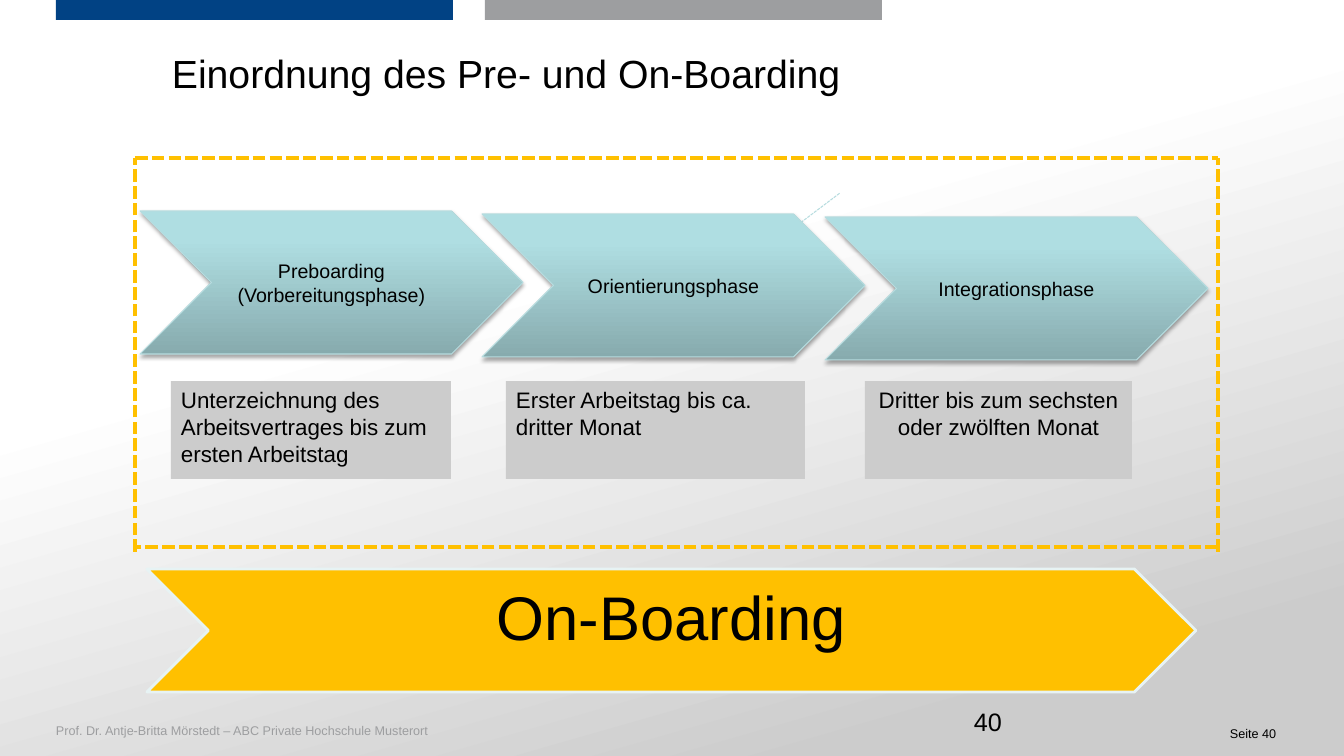
"""Build the slide that places pre-boarding and on-boarding in three phases."""
from lxml.etree import SubElement
from pptx import Presentation
from pptx.dml.color import RGBColor
from pptx.enum.dml import MSO_LINE
from pptx.enum.shapes import MSO_CONNECTOR, MSO_SHAPE
from pptx.enum.text import MSO_ANCHOR, PP_ALIGN
from pptx.oxml import parse_xml
from pptx.oxml.ns import nsdecls, qn
from pptx.util import Pt

PX = 914400 / 100.8
BLUE, GREY, PALE_GREY = "014284", "9D9EA0", "CCCCCC"
AMBER, ICE, TEAL = "FFC000", "E7F3F4", "B6DCDF"
CENTER, LEFT = PP_ALIGN.CENTER, PP_ALIGN.LEFT
SHADOW = (
    f'<a:effectLst {nsdecls("a")}><a:outerShdw blurRad="39400" dist="23000" dir="5400000" '
    'rotWithShape="0"><a:srgbClr val="000000"><a:alpha val="35000"/></a:srgbClr>'
    "</a:outerShdw></a:effectLst>"
)


def paint(fill, *colours, positions=(), angle=0):
    """Fill with one hex colour, or with a gradient of two."""
    if len(colours) == 1:
        fill.solid()
        fill.fore_color.rgb = RGBColor.from_string(colours[0])
        return
    fill.gradient()
    fill.gradient_angle = angle
    for stop, colour, position in zip(fill.gradient_stops, colours, positions):
        stop.color.rgb = RGBColor.from_string(colour)
        stop.position = position


def write(shape, text, size, colour="000000", align=LEFT, anchor=MSO_ANCHOR.TOP,
          margins=(10, 5, 10, 5), wrap=True):
    """Set the text of a shape, one paragraph a line, with its format."""
    frame = shape.text_frame
    frame.text = text
    frame.word_wrap = wrap
    frame.vertical_anchor = anchor
    (frame.margin_left, frame.margin_top,
     frame.margin_right, frame.margin_bottom) = [round(side * PX) for side in margins]
    for para in frame.paragraphs:
        para.alignment = align
        for span in para.runs:
            span.font.name = "Arial"
            span.font.size = Pt(size)
            paint(span.font.fill, colour)


deck = Presentation()
deck.slide_width, deck.slide_height = round(1344 * PX), round(756 * PX)
page = deck.slides.add_slide(deck.slide_layouts[5])
shapes = page.shapes
paint(page.background.fill, "FFFFFF", PALE_GREY, positions=(0.38, 0.87), angle=286)

title = shapes.title
title.left, title.top, title.width, title.height = [
    round(length * PX) for length in (35, 44, 942, 94)]
write(title, "Einordnung des Pre- und On-Boarding", 28, align=CENTER)

for left, colour in ((485, GREY), (56, BLUE)):
    bar = shapes.add_shape(MSO_SHAPE.RECTANGLE, *[
        round(length * PX) for length in (left, 0, 397, 20)])
    bar.shadow.inherit = False
    paint(bar.fill, colour)
    bar.line.fill.background()

footers = (
    ((56, 723, 1064, 15), "Prof. Dr. Antje-Britta Mörstedt – ABC Private Hochschule Musterort",
     dict(size=9, colour=GREY, margins=(0, 0, 0, 0))),
    ((1219, 720, 82, 27), "Seite 40", dict(size=9, margins=(11, 6, 11, 6), wrap=False)),
    ((964, 701, 255, 40), "40", dict(size=18)),
)
for place, text, style in footers:
    box = shapes.add_textbox(*[round(length * PX) for length in place])
    write(box, text, **style)

onboarding = shapes.add_shape(MSO_SHAPE.CHEVRON, *[
    round(length * PX) for length in (147, 569, 1049, 123)])
onboarding.shadow.inherit = False
paint(onboarding.fill, AMBER)
paint(onboarding.line.fill, ICE)
onboarding.line.width = Pt(2)
write(onboarding, "On-Boarding", 44, align=CENTER, margins=(10, 10, 10, 5))

periods = (
    (171, 280, "Unterzeichnung des Arbeitsvertrages bis zum ersten Arbeitstag", LEFT),
    (506, 299, "Erster Arbeitstag bis ca. dritter Monat", LEFT),
    (865, 267, "Dritter bis zum sechsten oder zwölften Monat", CENTER),
)
for left, width, text, align in periods:
    period = shapes.add_shape(MSO_SHAPE.RECTANGLE, *[
        round(length * PX) for length in (left, 381, width, 98)])
    period.shadow.inherit = False
    paint(period.fill, PALE_GREY)
    period.line.fill.background()
    write(period, text, 16, align=align)

dashes = (
    ((791, 230, 840, 193), TEAL, 0.75),
    ((1218, 552, 1218, 158), AMBER, 3),
    ((135, 552, 135, 158), AMBER, 3),
    ((135, 158, 1218, 158), AMBER, 3),
    ((1218, 547, 133, 547), AMBER, 3),
)
for ends, colour, weight in dashes:
    dash = shapes.add_connector(MSO_CONNECTOR.STRAIGHT, *[
        round(length * PX) for length in ends])
    paint(dash.line.fill, colour)
    dash.line.width = Pt(weight)
    dash.line.dash_style = MSO_LINE.SQUARE_DOT
    SubElement(dash._element.spPr, qn("a:effectLst"))

phases = (
    (140, 211, "Preboarding\n(Vorbereitungsphase)"),
    (482, 214, "Orientierungsphase"),
    (825, 217, "Integrationsphase"),
)
for left, top, text in phases:
    phase = shapes.add_shape(MSO_SHAPE.CHEVRON, *[
        round(length * PX) for length in (left, top, 383, 143)])
    paint(phase.fill, "87ABAE", "AFDEE2", positions=(0, 0.8), angle=90)
    paint(phase.line.fill, TEAL)
    phase.line.width = Pt(0.75)
    phase._element.spPr.append(parse_xml(SHADOW))
    write(phase, text, 14, align=CENTER, anchor=MSO_ANCHOR.MIDDLE)

deck.save("out.pptx")
